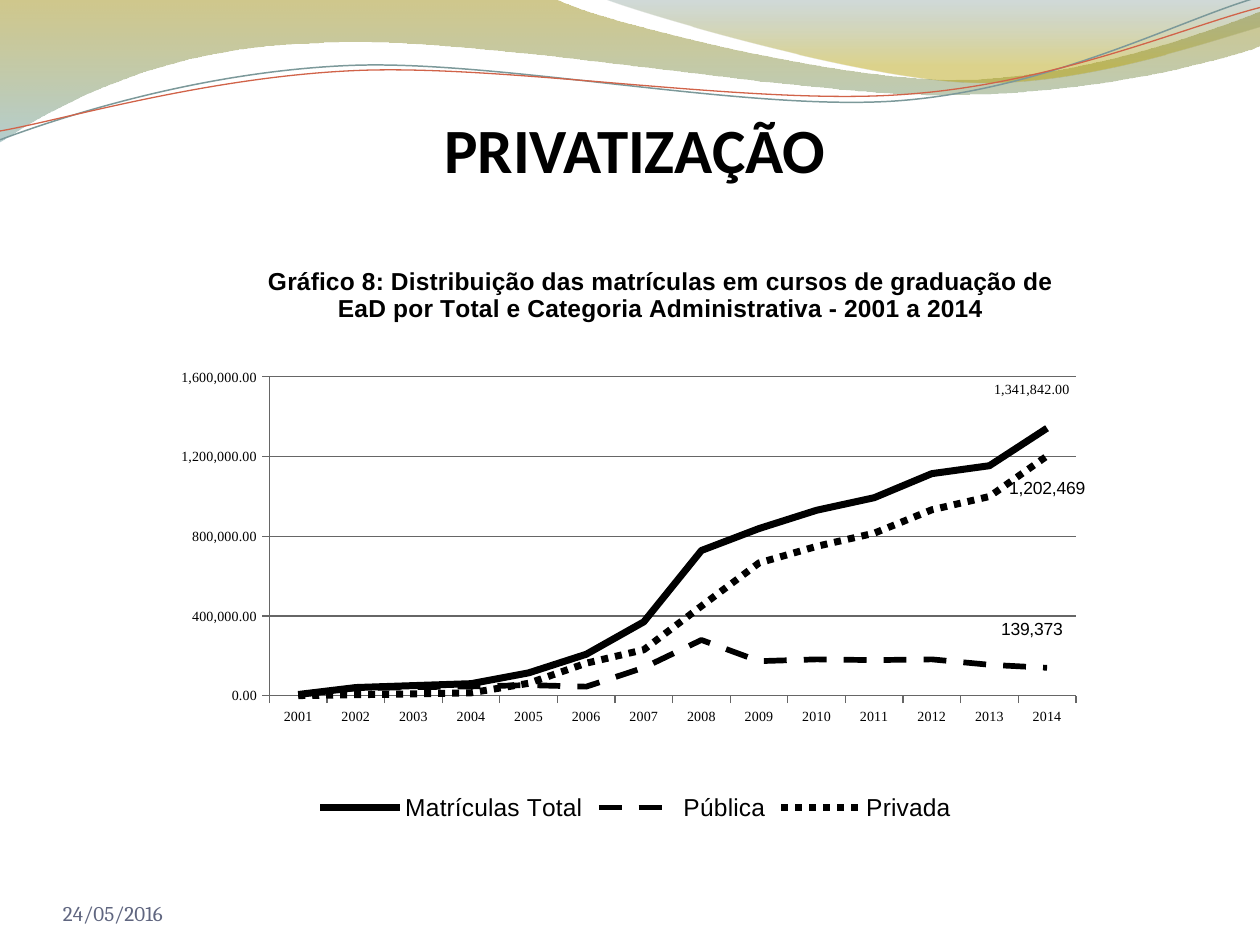
import math
from lxml import etree
from pptx import Presentation
from pptx.chart.data import CategoryChartData
from pptx.enum import chart as ch, dml, text
from pptx.dml.color import RGBColor
from pptx.oxml import parse_xml
from pptx.oxml.ns import nsdecls, qn
from pptx.util import Cm, Pt

HUES = {"ink": "000000", "date": "606680", "olive": "978500", "teal": "77A5A6",
        "slate": "648484", "gold": "B49F00", "gray": "7C999A", "red": "D16349",
        "grid": "666666"}
INCH = 2.54
TILT = 357.3


def rgb(name):
    return RGBColor.from_string(HUES[name])


def pairs(step):
    return list(zip(step[::2], step[1::2]))


def turn(path, mid):
    cos, sin = math.cos(math.radians(-TILT)), math.sin(math.radians(-TILT))
    done = []
    for step in path:
        flat = []
        for x, y in pairs(step):
            dx, dy = x - mid[0], y - mid[1]
            flat += [mid[0] + dx * cos - dy * sin, mid[1] + dx * sin + dy * cos]
        done.append(tuple(flat))
    return done


def layout(x, y, size=None, edge=False):
    inner = '<c:layoutTarget val="inner"/>' if size else ""
    modes = '<c:xMode val="edge"/><c:yMode val="edge"/>' if edge else ""
    span = '<c:w val="{}"/><c:h val="{}"/>'.format(*size) if size else ""
    return parse_xml(f'<c:layout {nsdecls("c")}><c:manualLayout>{inner}{modes}'
                     f'<c:x val="{x}"/><c:y val="{y}"/>{span}</c:manualLayout></c:layout>')


def place(node, item, after=None):
    for old in node.findall(qn("c:layout")):
        node.remove(old)
    if after:
        node.find(qn(after)).addnext(item)
    else:
        node.insert(0, item)


class Deck:
    def __init__(self, slide, face):
        self.slide = slide
        self.face = face

    def style(self, font, size, face=None, hue="ink", bold=False):
        font.size, font.name, font.bold = Pt(size), face or self.face, bold
        font.color.rgb = rgb(hue)

    def curve(self, path, close):
        path = [[(Cm(x * INCH), Cm(y * INCH)) for x, y in pairs(step)] for step in path]
        knots = [step[-1] for step in path]
        pen = self.slide.shapes.build_freeform(*knots[0], scale=1)
        pen.add_line_segments(knots[1:], close=close)
        shape = pen.convert_to_shape()
        shape.shadow.inherit = False
        left, top = (min(axis) for axis in zip(*knots))
        for line, step in zip(list(shape.element.iter(qn("a:lnTo"))), path[1:]):
            if len(step) == 3:
                bend = etree.Element(qn("a:cubicBezTo"))
                for x, y in step:
                    dot = etree.SubElement(bend, qn("a:pt"))
                    dot.set("x", str(x - left))
                    dot.set("y", str(y - top))
                line.getparent().replace(line, bend)
        return shape

    def wave(self, path, stops):
        shape = self.curve(path, True)
        shape.line.fill.background()
        fill = shape.fill
        fill.gradient()
        fill.gradient_angle = 270
        for stop, (spot, hue, _) in zip(fill.gradient_stops, stops):
            stop.position = spot
            stop.color.rgb = rgb(hue)
        for tag, (_, _, alpha) in zip(shape.element.spPr.iter(qn("a:srgbClr")), stops):
            etree.SubElement(tag, qn("a:alpha")).set("val", str(alpha * 1000))

    def thread(self, path, mid, hue, width):
        shape = self.curve(turn(path, mid), False)
        shape.rotation = TILT
        shape.fill.background()
        shape.line.color.rgb = rgb(hue)
        shape.line.width = Pt(width)

    def label(self, words, box, size, face, hue, align, bold=False):
        frame = self.slide.shapes.add_textbox(*map(Cm, box)).text_frame
        frame.word_wrap = True
        frame.vertical_anchor = text.MSO_ANCHOR.BOTTOM
        frame.margin_left = frame.margin_right = frame.margin_top = frame.margin_bottom = 0
        frame.text = words
        para = frame.paragraphs[0]
        para.alignment = align
        self.style(para.runs[0].font, size, face, hue, bold)

    def chart(self, box, title, cats, series):
        data = CategoryChartData()
        data.categories = cats
        for name, vals, *_ in series:
            data.add_series(name, vals)
        chart = self.slide.shapes.add_chart(
            ch.XL_CHART_TYPE.LINE, *map(Cm, box), data).chart
        self.style(chart.font, 10)
        chart.has_title = True
        head = chart.chart_title
        head.text_frame.text = title
        self.style(head.text_frame.paragraphs[0].runs[0].font, 14, "Arial", bold=True)
        head.include_in_layout = False
        place(head._element, layout(0.133, 0.026, edge=True), "c:tx")
        chart.has_legend = True
        chart.legend.position = ch.XL_LEGEND_POSITION.BOTTOM
        chart.legend.include_in_layout = False
        self.style(chart.legend.font, 14, "Arial")
        place(chart._chartSpace.chart.plotArea, layout(0.139, 0.226, (0.795, 0.549), True))
        self.axes(chart)
        for line, (_, vals, width, dash, spot) in zip(chart.plots[0].series, series):
            line.smooth = False
            line.marker.style = ch.XL_MARKER_STYLE.NONE
            line.format.line.color.rgb = rgb("ink")
            line.format.line.width = Pt(width)
            line.format.line.dash_style = dash
            self.tag(line.points[len(vals) - 1].data_label, *spot)
        for lead in chart._chartSpace.iter(qn("c:showLeaderLines")):
            lead.set("val", "0")

    def axes(self, chart):
        rows, cols = chart.value_axis, chart.category_axis
        for axis in (rows, cols):
            self.style(axis.tick_labels.font, 8)
            axis.format.line.color.rgb = rgb("grid")
            axis.major_tick_mark = ch.XL_TICK_MARK.OUTSIDE
        rows.minimum_scale, rows.maximum_scale, rows.major_unit = 0, 1600000, 400000
        rows.tick_labels.number_format = "#,##0.00"
        rows.tick_labels.number_format_is_linked = False
        rows.has_major_gridlines = True
        rows.major_gridlines.format.line.color.rgb = rgb("grid")

    def tag(self, label, size, face, form, spot, shift):
        self.style(label.font, size, face)
        label.position = spot
        node = label._dLbl
        place(node, layout(*shift), "c:idx")
        mark = etree.Element(qn("c:numFmt"))
        mark.set("formatCode", form)
        mark.set("sourceLinked", "0")
        node.find(qn("c:layout")).addnext(mark)


def main():
    prs = Presentation()
    prs.slide_width, prs.slide_height = Cm(25.4), Cm(19.05)
    deck = Deck(prs.slides.add_slide(prs.slide_layouts[6]), "Times New Roman")

    deck.wave([(0, 0), (4.4, -0.01), (4.76, 0.17, 6.64, 0.63, 7.58, 0.63),
               (8.53, 0.63, 9.58, 0.26, 10, 0.09), (10.01, 0.36),
               (9.83, 0.44, 8.7, 0.76, 7.46, 0.75), (6.22, 0.75, 3.82, 0.28, 2.57, 0.34),
               (1.29, 0.36, 0.46, 0.83, -0.01, 1.13), (0, 0)],
              [(0, "olive", 45), (1, "teal", 55)])
    deck.wave([(4.79, -0.01), (5.09, 0.11, 6.82, 0.62, 7.69, 0.65),
               (8.56, 0.69, 9.61, 0.32, 10, 0.21), (10, 0), (4.79, -0.01)],
              [(0, "slate", 30), (0.8, "gold", 45)])
    deck.thread([(0, 1.11), (0.48, 0.93, 1.58, 0.57, 2.77, 0.52),
                 (3.95, 0.47, 5.93, 0.89, 7.13, 0.8),
                 (8.33, 0.71, 9.38, 0.15, 9.98, -0.02)], (4.99, 0.57), "gray", 0.85)
    deck.thread([(0, 1.04), (0.47, 0.96, 1.64, 0.61, 2.83, 0.56),
                 (4.03, 0.51, 5.97, 0.84, 7.17, 0.75),
                 (8.36, 0.67, 9.41, 0.21, 10, 0.06)], (5, 0.59), "red", 0.75)

    deck.label("PRIVATIZAÇÃO", (1.27, 1.96, 23.06, 1.8), 36, "Calibri", "ink",
               text.PP_ALIGN.CENTER, True)
    deck.label("24/05/2016", (1.27, 17.65, 5.92, 1.02), 12, "Cambria", "date",
               text.PP_ALIGN.LEFT)

    above, below = ch.XL_LABEL_POSITION.ABOVE, ch.XL_LABEL_POSITION.BELOW
    dash = dml.MSO_LINE
    deck.chart(
        (2.59, 4.95, 20.45, 11.71),
        "Gráfico 8: Distribuição das matrículas em cursos de graduação de EaD "
        "por Total e Categoria Administrativa - 2001 a 2014",
        [str(year) for year in range(2001, 2015)],
        [("Matrículas Total",
          (5359, 40174, 49911, 59611, 113932, 207206, 369766, 727961, 838125, 930179,
           992927, 1113850, 1153572, 1341842), 4, dash.SOLID,
          (8, "Times New Roman", "#,##0.00", above, (-0.015, -0.045))),
         ("Pública",
          (5359, 36474, 41820, 45782, 52412, 44742, 140000, 278988, 172696, 181602,
           177924, 181624, 154553, 139373), 3.25, dash.DASH,
          (10, "Arial", "#,##0", above, (-0.015, -0.04))),
         ("Privada",
          (0, 4240, 8091, 13829, 61520, 162464, 229766, 448973, 665429, 748577,
           815003, 932226, 999019, 1202469), 4, dash.ROUND_DOT,
          (10, "Arial", "#,##0", below, (0, 0.03)))])
    prs.save("out.pptx")


if __name__ == "__main__":
    main()
